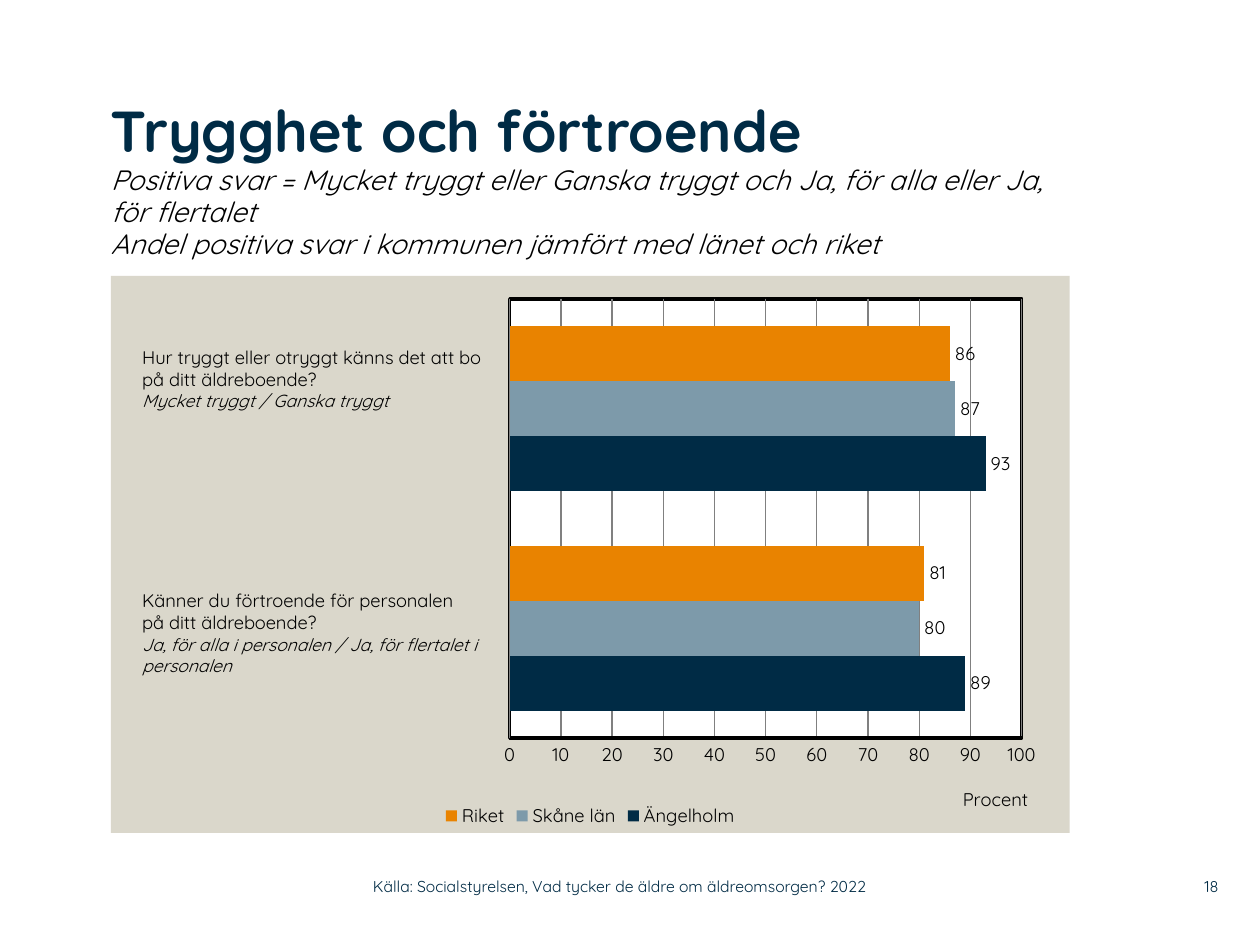
from lxml import etree
from pptx import Presentation
from pptx.chart.data import CategoryChartData
from pptx.dml.color import RGBColor
from pptx.enum.chart import XL_CHART_TYPE as ChartType, XL_LABEL_POSITION as LabelPos
from pptx.enum.chart import XL_LEGEND_POSITION as LegendPos, XL_TICK_MARK as Tick
from pptx.enum.text import MSO_ANCHOR as Anchor, PP_ALIGN as Align
from pptx.oxml import parse_xml
from pptx.oxml.ns import nsdecls
from pptx.util import Inches, Pt

FONT = "Quicksand"
NAVY = RGBColor(0x00, 0x2B, 0x45)
STEEL = RGBColor(0x7D, 0x9A, 0xAA)
ORANGE = RGBColor(0xE9, 0x83, 0x00)
BLACK = RGBColor(0, 0, 0)
GRAY = RGBColor(0x80, 0x80, 0x80)


def style(font, size, color=BLACK, bold=False, italic=False):
    font.name, font.size, font.bold, font.italic = FONT, Pt(size), bold, italic
    font.color.rgb = color


def add_text(box, lines, color=BLACK, align=Align.LEFT):
    """Add a text box; lines are (text, size, italic), one paragraph each."""
    tf = s.shapes.add_textbox(*(Inches(v) for v in box)).text_frame
    tf.word_wrap = True
    for i, (text, size, italic) in enumerate(lines):
        p = tf.add_paragraph() if i else tf.paragraphs[0]
        p.text, p.alignment = text, align
        style(p.runs[0].font, size, color, italic=italic)
    return tf


prs = Presentation()
prs.slide_width, prs.slide_height = Inches(10), Inches(7.5)
s = prs.slides.add_slide(prs.slide_layouts[5])

# Title
title = s.shapes.title
title.left, title.top, title.width, title.height = (
    Inches(v) for v in (0.88, 0.76, 7.75, 1.62))
tf = title.text_frame
tf.margin_left = tf.margin_right = tf.margin_bottom = 0
tf.margin_top = Inches(0.03)
tf.vertical_anchor = Anchor.TOP
tf.word_wrap = True
tf.text = ("Trygghet och förtroende\v"
           "Positiva svar = Mycket tryggt eller Ganska tryggt och Ja, för alla eller Ja, för flertalet\v"
           "Andel positiva svar i kommunen jämfört med länet och riket")
p = tf.paragraphs[0]
p.alignment, p.line_spacing = Align.LEFT, 0.95
style(p.runs[0].font, 33, NAVY, bold=True)
for r in p.runs[1:]:
    style(r.font, 16, italic=True)

# Chart
SERIES = [("Ängelholm", (89, 93), NAVY), ("Skåne län", (80, 87), STEEL), ("Riket", (81, 86), ORANGE)]
data = CategoryChartData()
data.categories = ["1", "2"]
for name, values, _ in SERIES:
    data.add_series(name, values)
chart = s.shapes.add_chart(ChartType.BAR_CLUSTERED, Inches(0.88), Inches(2.19),
                           Inches(7.61), Inches(4.42), data).chart
style(chart.font, 10.5)
chart.has_title = False
chart.has_legend = True
chart.legend.position = LegendPos.BOTTOM
chart.legend.include_in_layout = False
style(chart.legend.font, 10.5)

plot = chart.plots[0]
plot.gap_width, plot.overlap, plot.vary_by_categories = 100, 0, False
for series, (_, _, color) in zip(plot.series, SERIES):
    series.format.fill.solid()
    series.format.fill.fore_color.rgb = color
    labels = series.data_labels
    labels.show_value, labels.position = True, LabelPos.OUTSIDE_END
    style(labels.font, 10.5)

chart.category_axis.visible = False
axis = chart.value_axis
axis.minimum_scale, axis.maximum_scale, axis.major_unit = 0, 100, 10
axis.major_tick_mark = axis.minor_tick_mark = Tick.NONE
axis.format.line.color.rgb, axis.format.line.width = BLACK, Pt(2)
grid = axis.major_gridlines.format.line
grid.color.rgb, grid.width = GRAY, Pt(0.75)
style(axis.tick_labels.font, 10.5)
tf = axis.axis_title.text_frame
tf.text = "Procent"
style(tf.paragraphs[0].runs[0].font, 10.5)


def layout_xml(x, y, inner_size=None):
    """Manual layout in fractions of the chart; inner_size is for the plot area."""
    parts = [("xMode", "edge"), ("yMode", "edge"), ("x", x), ("y", y)]
    if inner_size:
        parts = [("layoutTarget", "inner")] + parts + list(zip("wh", inner_size))
    items = "".join(f'<c:{tag} val="{value}"/>' for tag, value in parts)
    return parse_xml(f'<c:layout {nsdecls("c")}><c:manualLayout>{items}</c:manualLayout></c:layout>')


def_fill = '<a:solidFill><a:srgbClr val="{}"/></a:solidFill>'
space = chart._chartSpace
area = space.chart.plotArea
for old in area.findall("{*}layout"):
    area.remove(old)
area.insert(0, layout_xml(0.416, 0.041, (0.534, 0.789)))
axis_title = axis.axis_title._element
for old in axis_title.findall("{*}layout"):
    axis_title.remove(old)
axis_title.find("{*}tx").addnext(layout_xml(0.885, 0.91))

ns = nsdecls("c", "a")
area.append(parse_xml(f'<c:spPr {ns}>{def_fill.format("FFFFFF")}'
                      f'<a:ln w="{Pt(2)}">{def_fill.format("000000")}</a:ln></c:spPr>'))
space.chart.addnext(parse_xml(f'<c:spPr {ns}>{def_fill.format("DAD7CB")}'
                              '<a:ln><a:noFill/></a:ln></c:spPr>'))

# Questions beside the bars
add_text((1.03, 2.7, 2.98, 0.81), [
    ("Hur tryggt eller otryggt känns det att bo på ditt äldreboende?", 10.5, False),
    ("Mycket tryggt / Ganska tryggt", 10, True)])
add_text((1.03, 4.63, 3, 0.98), [
    ("Känner du förtroende för personalen", 10.5, False),
    ("på ditt äldreboende?", 10.5, False),
    ("Ja, för alla i personalen / Ja, för flertalet i personalen", 10, True)])

# Footer
for box, text, align in [
        ((2.96, 6.89, 4.43, 0.29), "Källa: Socialstyrelsen, Vad tycker de äldre om äldreomsorgen? 2022", Align.LEFT),
        ((9.2, 6.89, 0.47, 0.29), "18", Align.RIGHT)]:
    tf = add_text(box, [(text, 9, False)], NAVY, align)
    tf.margin_left = tf.margin_right = tf.margin_top = tf.margin_bottom = 0
    tf.vertical_anchor = Anchor.MIDDLE

prs.save("out.pptx")
